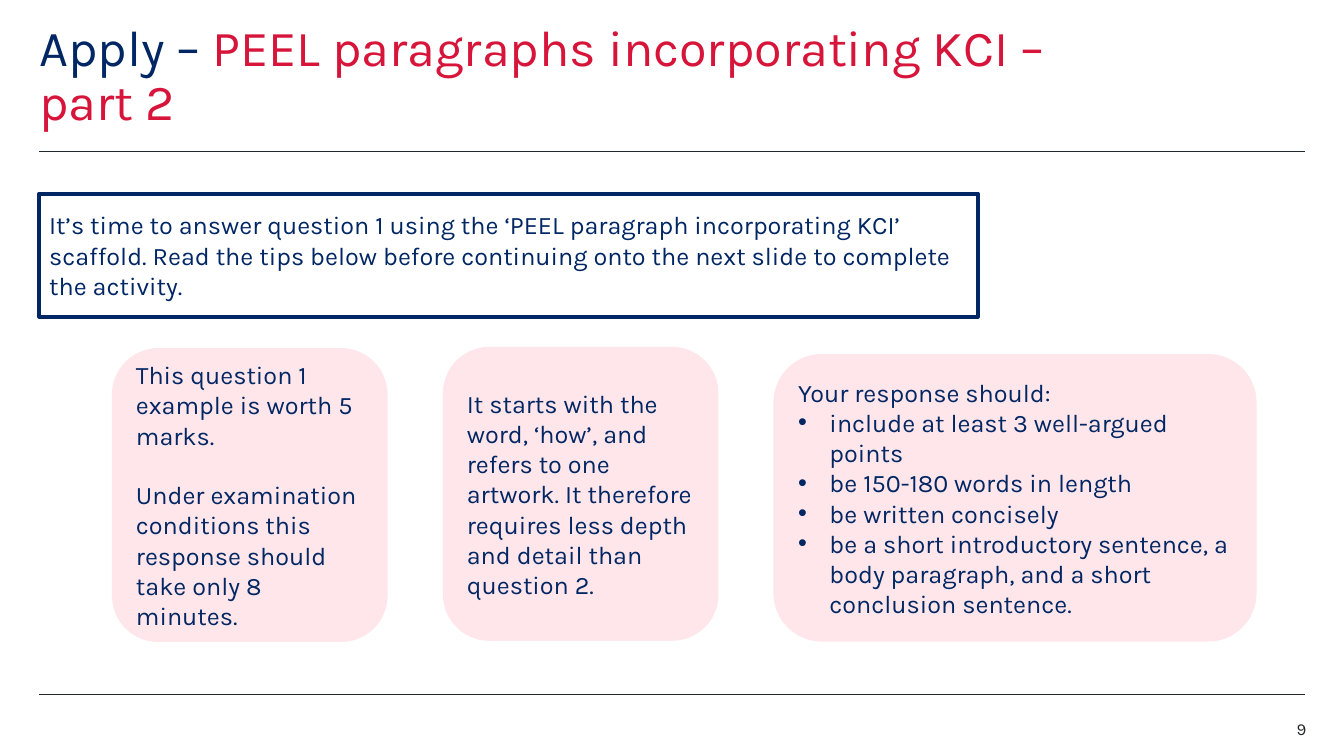
from dataclasses import dataclass

from lxml.etree import SubElement
from pptx import Presentation
from pptx.dml.color import RGBColor
from pptx.enum.shapes import MSO_CONNECTOR, MSO_SHAPE
from pptx.enum.text import MSO_ANCHOR, MSO_AUTO_SIZE, PP_ALIGN
from pptx.oxml.ns import qn
from pptx.util import Cm, Pt

COLOURS = {
    "navy": "002664",
    "red": "D7153A",
    "pink": "FFE6EA",
    "white": "FFFFFF",
    "ink": "22272B",
}
FONT = "Karla"
MARGIN = 0.99
RULE_END = 32.89
RULE_TOPS = (3.81, 17.5)
CORNER_INSET = 0.35
BULLET_INDENT = 0.79


@dataclass(frozen=True)
class Panel:
    left: float
    top: float
    width: float
    height: float
    paragraphs: tuple[str, ...] = ()
    shape: MSO_SHAPE = MSO_SHAPE.ROUNDED_RECTANGLE
    fill: str = "pink"
    line: str = "pink"
    line_width: float = 1


INSTRUCTION = Panel(
    MARGIN, 4.88, 23.65, 3.1,
    ("It’s time to answer question 1 using the ‘PEEL paragraph incorporating KCI’ "
     "scaffold. Read the tips below before continuing onto the next slide to "
     "complete the activity.",),
    MSO_SHAPE.RECTANGLE, "white", "navy", 3,
)
MARKS_TIP = Panel(
    2.84, 8.79, 6.91, 7.37,
    ("This question 1 example is worth 5 marks.",
     "Under examination conditions this response should take only 8 minutes."),
)
WORDING_TIP = Panel(
    11.18, 8.76, 6.91, 7.37,
    ("It starts with the word, ‘how’, and refers to one artwork. It therefore "
     "requires less depth and detail than question 2.",),
)
RESPONSE_TIP = Panel(19.51, 8.94, 12.14, 7.21)
RESPONSE_INTRO = "Your response should:"
RESPONSE_POINTS = (
    "include at least 3 well-argued points",
    "be 150-180 words in length",
    "be written concisely",
    "be a short introductory sentence, a body paragraph, and a short conclusion sentence.",
)


def colour(name: str) -> RGBColor:
    return RGBColor.from_string(COLOURS[name])


def place(target, left: float, top: float, width: float, height: float) -> None:
    target.left, target.top = Cm(left), Cm(top)
    target.width, target.height = Cm(width), Cm(height)


def set_frame(frame, anchor: MSO_ANCHOR, inset: float | None = None) -> None:
    frame.word_wrap = True
    frame.auto_size = MSO_AUTO_SIZE.NONE
    frame.vertical_anchor = anchor
    if inset is not None:
        frame.margin_left = frame.margin_right = Cm(inset)
        frame.margin_top = frame.margin_bottom = Cm(inset)


def add_run(paragraph, wording: str, size: float = 18, tint: str = "navy") -> None:
    run = paragraph.add_run()
    run.text = wording
    run.font.name = FONT
    run.font.size = Pt(size)
    run.font.color.rgb = colour(tint)


def next_paragraph(frame, index: int, space_before: float = 0):
    paragraph = frame.add_paragraph() if index else frame.paragraphs[0]
    paragraph.alignment = PP_ALIGN.LEFT
    paragraph.space_before = Pt(space_before if index else 0)
    return paragraph


def set_bullet(paragraph, bulleted: bool) -> None:
    properties = paragraph._p.get_or_add_pPr()
    indent = Cm(BULLET_INDENT) if bulleted else 0
    properties.set("marL", str(indent))
    properties.set("indent", str(-indent))
    if bulleted:
        SubElement(properties, qn("a:buFont")).set("typeface", "Arial")
        SubElement(properties, qn("a:buChar")).set("char", "•")
    else:
        SubElement(properties, qn("a:buNone"))


def add_rule(slide, top: float) -> None:
    rule = slide.shapes.add_connector(
        MSO_CONNECTOR.STRAIGHT, Cm(MARGIN), Cm(top), Cm(RULE_END), Cm(top)
    )
    rule.line.color.rgb = colour("ink")
    rule.line.width = Pt(0.5)
    SubElement(rule._element.spPr, qn("a:effectLst"))


def add_panel(slide, panel: Panel) -> None:
    box = slide.shapes.add_shape(
        panel.shape, Cm(panel.left), Cm(panel.top), Cm(panel.width), Cm(panel.height)
    )
    box.shadow.inherit = False
    box.fill.solid()
    box.fill.fore_color.rgb = colour(panel.fill)
    box.line.color.rgb = colour(panel.line)
    box.line.width = Pt(panel.line_width)
    set_frame(box.text_frame, MSO_ANCHOR.MIDDLE)
    for index, wording in enumerate(panel.paragraphs):
        add_run(next_paragraph(box.text_frame, index, 21), wording)


def fill_title(title) -> None:
    place(title, MARGIN, 0.58, 27.99, 2.79)
    set_frame(title.text_frame, MSO_ANCHOR.TOP, 0)
    heading = next_paragraph(title.text_frame, 0)
    heading.line_spacing = 0.9
    add_run(heading, "Apply – ", 36)
    add_run(heading, "PEEL paragraphs incorporating KCI – part 2", 36, "red")


def fill_response_list(body) -> None:
    place(
        body,
        RESPONSE_TIP.left + CORNER_INSET,
        RESPONSE_TIP.top + CORNER_INSET,
        RESPONSE_TIP.width - 2 * CORNER_INSET,
        RESPONSE_TIP.height - 2 * CORNER_INSET,
    )
    set_frame(body.text_frame, MSO_ANCHOR.MIDDLE)
    for index, wording in enumerate((RESPONSE_INTRO, *RESPONSE_POINTS)):
        paragraph = next_paragraph(body.text_frame, index)
        set_bullet(paragraph, index > 0)
        add_run(paragraph, wording)
    body.element.getparent().append(body.element)


def add_page_number(slide) -> None:
    page_number = slide.shapes.add_textbox(Cm(30.91), Cm(18.11), Cm(2.01), Cm(0.51))
    set_frame(page_number.text_frame, MSO_ANCHOR.TOP, 0)
    paragraph = next_paragraph(page_number.text_frame, 0)
    paragraph.alignment = PP_ALIGN.RIGHT
    add_run(paragraph, "9", 12, "ink")


def main() -> None:
    presentation = Presentation()
    presentation.slide_width = Cm(33.87)
    presentation.slide_height = Cm(19.05)
    slide = presentation.slides.add_slide(presentation.slide_layouts[1])
    slide.background.fill.solid()
    slide.background.fill.fore_color.rgb = colour("white")

    for top in RULE_TOPS:
        add_rule(slide, top)
    fill_title(slide.shapes.title)
    for panel in (INSTRUCTION, MARKS_TIP, WORDING_TIP, RESPONSE_TIP):
        add_panel(slide, panel)
    fill_response_list(slide.placeholders[1])
    add_page_number(slide)
    presentation.save("out.pptx")


if __name__ == "__main__":
    main()
